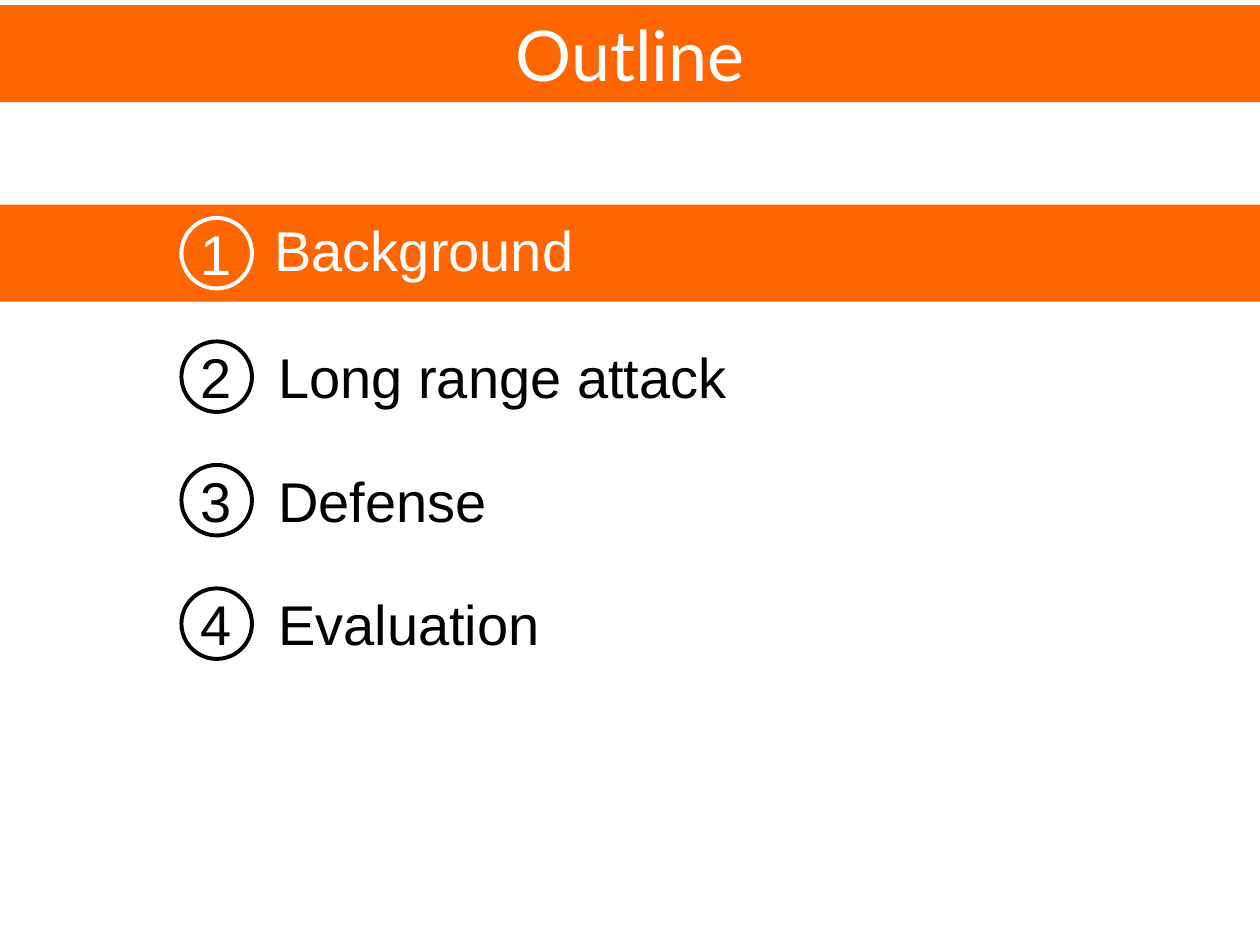
"""Build an outline slide with four numbered topics, the first one highlighted."""
import dataclasses

import pptx
import pptx.dml.color
import pptx.enum.shapes
import pptx.enum.text
import pptx.util


@dataclasses.dataclass(frozen=True)
class Theme:
    accent: str = "FF6600"
    light: str = "FFFFFF"
    dark: str = "000000"
    heading_font: str = "Lato"
    topic_font: str = "Arial"
    heading_size: int = 40
    topic_size: int = 32
    ring_width: float = 2.25


theme = Theme()
rgb = pptx.dml.color.RGBColor.from_string
inches = pptx.util.Inches


def write(text, *, holder, font, size, color, align=pptx.enum.text.PP_ALIGN.LEFT,
          anchor=pptx.enum.text.MSO_ANCHOR.TOP):
    frame = holder.text_frame
    frame.word_wrap = True
    frame.auto_size = pptx.enum.text.MSO_AUTO_SIZE.NONE
    frame.vertical_anchor = anchor
    frame.text = text
    paragraph = frame.paragraphs[0]
    paragraph.alignment = align
    paragraph.font.name = font
    paragraph.font.size = pptx.util.Pt(size)
    paragraph.font.color.rgb = rgb(color)


deck = pptx.Presentation()
deck.slide_width, deck.slide_height = inches(10), inches(7.5)
slide = deck.slides.add_slide(deck.slide_layouts[5])
shapes = slide.shapes
kinds = pptx.enum.shapes.MSO_SHAPE

band_height = inches(0.77)
first_row, row_pitch, row_height = inches(1.69), inches(0.98), inches(0.64)
ring_left, ring_size = inches(1.44), inches(0.56)
number_left, number_width = inches(1.49), inches(0.58)
topic_left, topic_width = inches(2.11), inches(6.02)

heading = shapes.title
heading.left, heading.top = 0, inches(0.04)
heading.width, heading.height = deck.slide_width, band_height
heading.fill.solid()
heading.fill.fore_color.rgb = rgb(theme.accent)
write("Outline", holder=heading, font=theme.heading_font, size=theme.heading_size,
      color=theme.light, align=pptx.enum.text.PP_ALIGN.CENTER,
      anchor=pptx.enum.text.MSO_ANCHOR.MIDDLE)

highlight = shapes.add_shape(
    kinds.RECTANGLE, 0, first_row - (band_height - row_height) // 2,
    deck.slide_width, band_height)
highlight.shadow.inherit = False
highlight.fill.solid()
highlight.fill.fore_color.rgb = rgb(theme.accent)
highlight.line.fill.background()

topics = ["Background", "Long range attack", "Defense", "Evaluation"]
for row, topic in enumerate(topics):
    current = row == 0
    color = theme.light if current else theme.dark
    top = first_row + row * row_pitch
    nudge = inches(0.03) if current else 0

    label = shapes.add_textbox(topic_left - nudge, top - nudge, topic_width, row_height)
    write(topic, holder=label, font=theme.topic_font, size=theme.topic_size, color=color)

    ring = shapes.add_shape(
        kinds.OVAL, ring_left, top + (row_height - ring_size) // 2, ring_size, ring_size)
    ring.shadow.inherit = False
    ring.fill.background()
    ring.line.color.rgb = rgb(color)
    ring.line.width = pptx.util.Pt(theme.ring_width)

    number = shapes.add_textbox(number_left, top, number_width, row_height)
    write(str(row + 1), holder=number, font=theme.topic_font, size=theme.topic_size,
          color=color)

deck.save("out.pptx")
